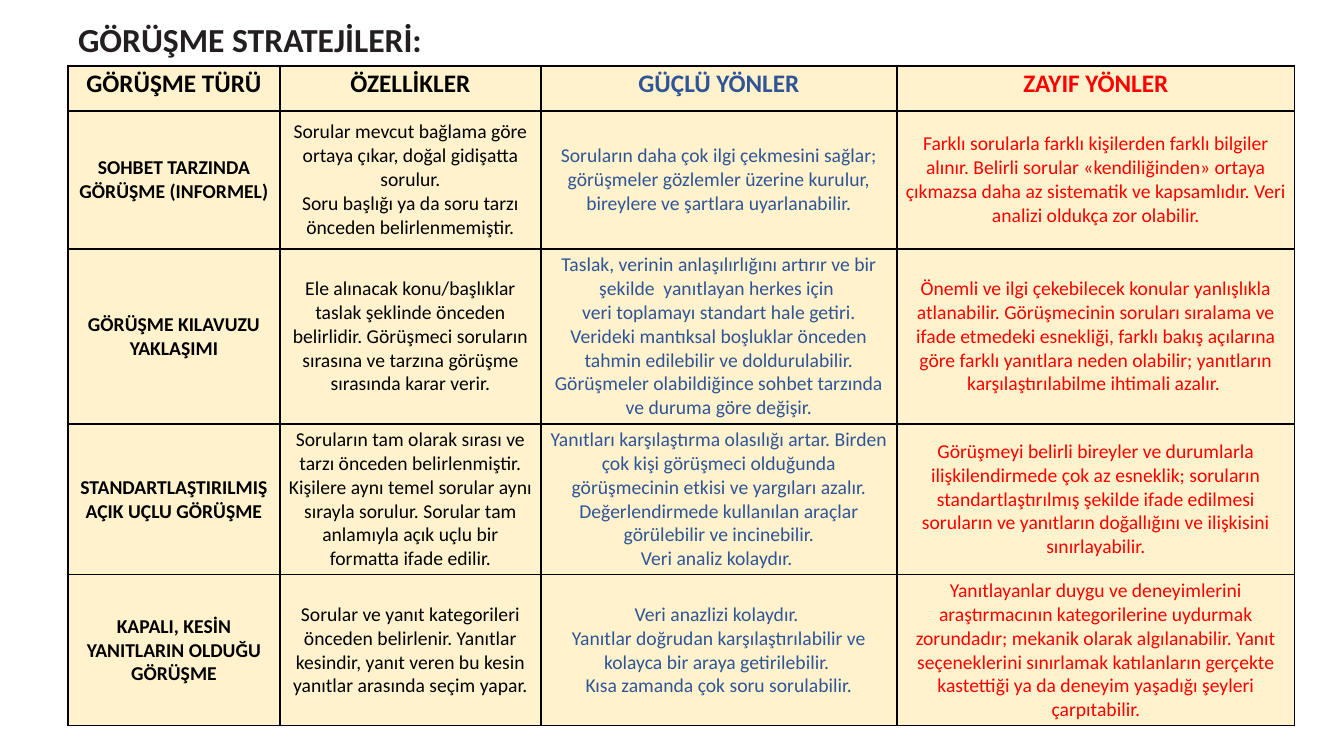
import pptx
import pptx.dml.color
import pptx.enum.text
import pptx.oxml
import pptx.oxml.ns
import pptx.util

RGBColor = pptx.dml.color.RGBColor
ALIGN = pptx.enum.text.PP_ALIGN
ANCHOR = pptx.enum.text.MSO_ANCHOR

TITLE_INK = RGBColor(0x23, 0x1F, 0x20)
BLACK = RGBColor(0x00, 0x00, 0x00)
BLUE = RGBColor(0x2F, 0x55, 0x97)
RED = RGBColor(0xFF, 0x00, 0x00)
CREAM = RGBColor(0xFF, 0xF2, 0xCC)

SLIDE_SIZE = (1344, 756)
COLUMN_WIDTHS = (212, 261, 356, 398)
ROW_HEIGHTS = (45, 138, 175, 151, 151)
COLUMN_COLOURS = (BLACK, BLACK, BLUE, RED)

# Each row: type, features, strengths, weaknesses; a line break starts a paragraph
STRATEGIES = [
    ("GÖRÜŞME TÜRÜ", "ÖZELLİKLER", "GÜÇLÜ YÖNLER", "ZAYIF YÖNLER"),
    ("SOHBET TARZINDA GÖRÜŞME (INFORMEL)",
     "Sorular mevcut bağlama göre ortaya çıkar, doğal gidişatta sorulur.\n"
     "Soru başlığı ya da soru tarzı önceden belirlenmemiştir.",
     "Soruların daha çok ilgi çekmesini sağlar; görüşmeler gözlemler üzerine "
     "kurulur, bireylere ve şartlara uyarlanabilir.",
     "Farklı sorularla farklı kişilerden farklı bilgiler alınır. Belirli sorular "
     "«kendiliğinden» ortaya çıkmazsa daha az sistematik ve kapsamlıdır. "
     "Veri analizi oldukça zor olabilir."),
    ("GÖRÜŞME KILAVUZU YAKLAŞIMI",
     "Ele alınacak konu/başlıklar taslak şeklinde önceden belirlidir. Görüşmeci "
     "soruların sırasına ve tarzına görüşme sırasında karar verir.",
     "Taslak, verinin anlaşılırlığını artırır ve bir şekilde  yanıtlayan herkes için \n"
     "veri toplamayı standart hale getiri. Verideki mantıksal boşluklar önceden "
     "tahmin edilebilir ve doldurulabilir. Görüşmeler olabildiğince sohbet "
     "tarzında ve duruma göre değişir.",
     "Önemli ve ilgi çekebilecek konular yanlışlıkla atlanabilir. Görüşmecinin "
     "soruları sıralama ve ifade etmedeki esnekliği, farklı bakış açılarına göre "
     "farklı yanıtlara neden olabilir; yanıtların karşılaştırılabilme ihtimali "
     "azalır. "),
    ("STANDARTLAŞTIRILMIŞ AÇIK UÇLU GÖRÜŞME",
     "Soruların tam olarak sırası ve tarzı önceden belirlenmiştir. Kişilere aynı "
     "temel sorular aynı sırayla sorulur. Sorular tam anlamıyla açık uçlu bir "
     "formatta ifade edilir.",
     "Yanıtları karşılaştırma olasılığı artar. Birden çok kişi görüşmeci olduğunda "
     "görüşmecinin etkisi ve yargıları azalır. Değerlendirmede kullanılan araçlar "
     "görülebilir ve incinebilir.\n"
     "Veri analiz kolaydır. ",
     "Görüşmeyi belirli bireyler ve durumlarla ilişkilendirmede çok az esneklik; "
     "soruların standartlaştırılmış şekilde ifade edilmesi soruların ve yanıtların "
     "doğallığını ve ilişkisini sınırlayabilir."),
    ("KAPALI, KESİN YANITLARIN OLDUĞU GÖRÜŞME",
     "Sorular ve yanıt kategorileri önceden belirlenir. Yanıtlar kesindir, yanıt "
     "veren bu kesin yanıtlar arasında seçim yapar.",
     "Veri anazlizi kolaydır. \n"
     "Yanıtlar doğrudan karşılaştırılabilir ve kolayca bir araya getirilebilir. \n"
     "Kısa zamanda çok soru sorulabilir.",
     "Yanıtlayanlar duygu ve deneyimlerini araştırmacının kategorilerine uydurmak "
     "zorundadır; mekanik olarak algılanabilir. Yanıt seçeneklerini sınırlamak "
     "katılanların gerçekte kastettiği ya da deneyim yaşadığı şeyleri çarpıtabilir."),
]


def px(length):
    return round(length * 914400 / 100.8)


def apply(target, values):
    for name, value in values.items():
        setattr(target, name, value)


class StrategySlide:
    font_name = "Calibri"
    border_width = pptx.util.Pt(1)

    def __init__(self, slide):
        self.slide = slide

    def set_text(self, frame, text, size, colour, bold, align):
        frame.text = text
        for paragraph in frame.paragraphs:
            paragraph.alignment = align
            for run in paragraph.runs:
                apply(run.font, {"name": self.font_name, "bold": bold,
                                 "size": pptx.util.Pt(size)})
                run.font.color.rgb = colour

    def title(self, text, left, top, width, height):
        heading = self.slide.shapes.title
        apply(heading, {"left": px(left), "top": px(top),
                        "width": px(width), "height": px(height)})
        self.set_text(heading.text_frame, text, 24, TITLE_INK, True, ALIGN.LEFT)
        apply(heading.text_frame, {
            "vertical_anchor": ANCHOR.TOP, "word_wrap": True,
            "auto_size": pptx.enum.text.MSO_AUTO_SIZE.SHAPE_TO_FIT_TEXT})

    def borders(self, cell):
        properties = cell._tc.get_or_add_tcPr()
        for index, side in enumerate("LRTB"):
            properties.insert(index, pptx.oxml.parse_xml(
                f'<a:ln{side} {pptx.oxml.ns.nsdecls("a")} w="{self.border_width}">'
                f'<a:solidFill><a:srgbClr val="{BLACK}"/></a:solidFill></a:ln{side}>'))

    def table(self, rows, left, top):
        grid = self.slide.shapes.add_table(
            len(rows), len(COLUMN_WIDTHS), px(left), px(top),
            px(sum(COLUMN_WIDTHS)), px(sum(ROW_HEIGHTS))).table
        apply(grid, {"first_row": False, "horz_banding": False})
        for column, width in zip(grid.columns, COLUMN_WIDTHS):
            column.width = px(width)
        for row, height in zip(grid.rows, ROW_HEIGHTS):
            row.height = px(height)
        for r, texts in enumerate(rows):
            header = r == 0
            for c, text in enumerate(texts):
                cell = grid.cell(r, c)
                apply(cell, {
                    "margin_left": px(8), "margin_right": px(8),
                    "margin_top": px(3), "margin_bottom": px(3),
                    "vertical_anchor": ANCHOR.TOP if header else ANCHOR.MIDDLE})
                cell.fill.solid()
                cell.fill.fore_color.rgb = CREAM
                self.borders(cell)
                self.set_text(cell.text_frame, text, 18 if header else 14,
                              COLUMN_COLOURS[c], header or c == 0, ALIGN.CENTER)


def main():
    deck = pptx.Presentation()
    deck.slide_width, deck.slide_height = map(px, SLIDE_SIZE)
    page = StrategySlide(deck.slides.add_slide(deck.slide_layouts[5]))

    # Heading
    page.title("GÖRÜŞME STRATEJİLERİ:", 68, 14, 1208, 50)

    # Comparison of interview types
    page.table(STRATEGIES, 68, 66)

    deck.save("out.pptx")


if __name__ == "__main__":
    main()
